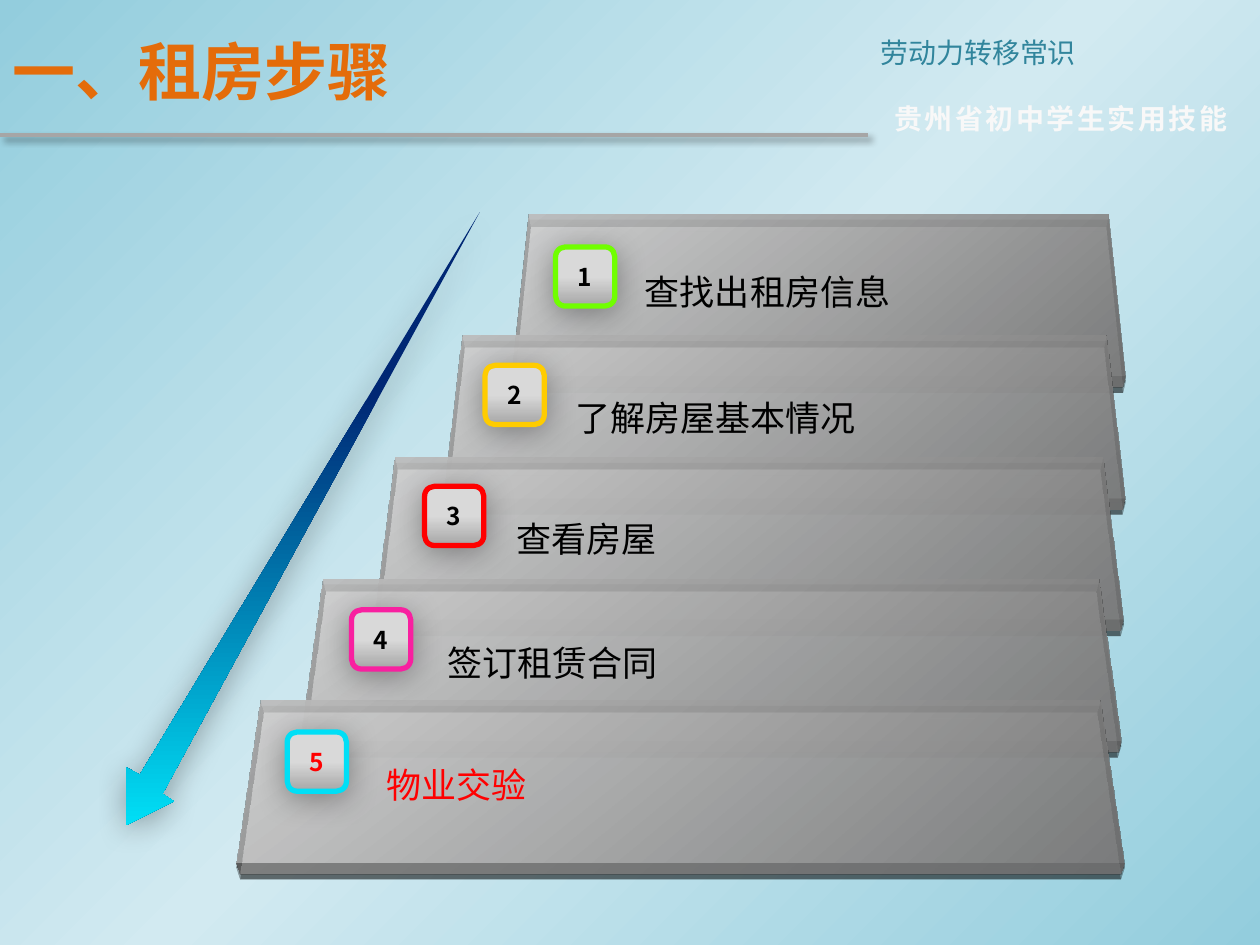
import dataclasses

import lxml.etree
import pptx
import pptx.dml.color
import pptx.enum.shapes
import pptx.enum.text
import pptx.oxml.ns
import pptx.util

Inches = pptx.util.Inches
Pt = pptx.util.Pt
qn = pptx.oxml.ns.qn
Align = pptx.enum.text.PP_ALIGN
Anchor = pptx.enum.text.MSO_ANCHOR
ShapeType = pptx.enum.shapes.MSO_SHAPE


@dataclasses.dataclass(frozen=True)
class Theme:
    font: str = "Noto Sans CJK SC"
    title_size: int = 36
    label_size: int = 20
    header_size: int = 16
    number_size: int = 14
    title: str = "E46C0A"
    topic: str = "31859C"
    series: str = "F8F8F8"
    rule: str = "A6A6A6"
    text: str = "000000"
    highlight: str = "FF0000"
    background: tuple = ((0, "93CDDD"), (50, "D2EAF1"), (100, "93CDDD"))
    slab: tuple = ((0, "D9D9D9"), (100, "808080"))
    badge: tuple = ((50, "D9D9D9"), (100, "A6A6A6"))
    arrow: tuple = ((30, "002774"), (100, "00DFF6"))


THEME = Theme()


@dataclasses.dataclass(frozen=True)
class Step:
    label: str
    color: str
    slab_left: float
    slab_width: float
    badge_at: tuple
    label_at: tuple
    text_color: str = THEME.text


STEPS = (
    Step("查找出租房信息", "70FF00", 4.13, 4.73, (4.41, 1.96), (5.02, 2.1)),
    Step("了解房屋基本情况", "FFCC00", 3.6, 5.25, (3.85, 2.9), (4.47, 3.1)),
    Step("查看房屋", "FF0000", 3.06, 5.77, (3.37, 3.86), (4.0, 4.06)),
    Step("签订租赁合同", "F820A0", 2.48, 6.32, (2.79, 4.84), (3.45, 5.04)),
    Step("物业交验", "00DFF6", 1.98, 6.84, (2.28, 5.81), (2.97, 6.01), THEME.highlight),
)
FIRST_SLAB_TOP, SLAB_PITCH, SLAB_HEIGHT = 1.54, 0.965, 1.57


def rgb(color):
    return pptx.dml.color.RGBColor.from_string(color)


def paint_gradient(fill, element, stops, angle, opacity=100):
    """Fill with any number of (percent, colour) stops; angle runs clockwise."""
    fill.gradient()
    fill.gradient_angle = 360 - angle
    stop_list = next(element.iter(qn("a:gsLst")))
    for stop in list(stop_list):
        stop_list.remove(stop)
    for percent, color in stops:
        stop = lxml.etree.SubElement(stop_list, qn("a:gs"), pos=str(percent * 1000))
        paint = lxml.etree.SubElement(stop, qn("a:srgbClr"), val=color)
        if opacity < 100:
            lxml.etree.SubElement(paint, qn("a:alpha"), val=str(opacity * 1000))


def add_shadow(shape, opacity, blur, distance, angle):
    """Give a shape or connector, whose line is already set, an outer shadow."""
    effects = lxml.etree.SubElement(shape.element.spPr, qn("a:effectLst"))
    shadow = lxml.etree.SubElement(
        effects, qn("a:outerShdw"), blurRad=str(Pt(blur)), dist=str(Pt(distance)),
        dir=str(angle * 60000), algn="ctr", rotWithShape="0")
    color = lxml.etree.SubElement(shadow, qn("a:srgbClr"), val="000000")
    lxml.etree.SubElement(color, qn("a:alpha"), val=str(opacity * 1000))


def tilt_back(shape, thickness):
    """Lay a flat shape down in perspective and give it a thickness."""
    properties = shape.element.spPr
    scene = lxml.etree.SubElement(properties, qn("a:scene3d"))
    lxml.etree.SubElement(scene, qn("a:camera"), prst="perspectiveRelaxedModerately")
    lxml.etree.SubElement(scene, qn("a:lightRig"), rig="threePt", dir="t")
    lxml.etree.SubElement(properties, qn("a:sp3d"), extrusionH=str(Pt(thickness)))


def write(shape, text, size, color, bold=False, align=Align.LEFT, spacing=0):
    frame = shape.text_frame
    frame.word_wrap = True
    frame.auto_size = pptx.enum.text.MSO_AUTO_SIZE.NONE
    paragraph = frame.paragraphs[0]
    paragraph.text = text
    paragraph.alignment = align
    font = paragraph.font
    font.name, font.size, font.bold = THEME.font, Pt(size), bold
    font.color.rgb = rgb(color)
    properties = next(paragraph._p.iter(qn("a:defRPr")))
    lxml.etree.SubElement(properties, qn("a:ea"), typeface=THEME.font)
    if spacing:
        properties.set("spc", str(spacing))
    return frame


def add_label(slide, box, text, size, color, **style):
    textbox = slide.shapes.add_textbox(*map(Inches, box))
    write(textbox, text, size, color, **style)


def add_header(slide, left, top, width, height):
    title_width = 6.89
    title = slide.shapes.title
    title.left, title.top = Inches(left), Inches(top + 0.05)
    title.width, title.height = Inches(title_width), Inches(height - 0.05)
    frame = write(title, "一、租房步骤", THEME.title_size, THEME.title, bold=True)
    frame.vertical_anchor = Anchor.MIDDLE

    side, side_width = left + title_width, width - title_width
    add_label(slide, (side, top + 0.23, side_width, 0.37), "劳动力转移常识",
              THEME.header_size, THEME.topic)
    add_label(slide, (side + 0.11, top + 0.76, side_width - 0.11, 0.37),
              "贵州省初中学生实用技能", THEME.header_size, THEME.series,
              bold=True, spacing=150)

    y = Inches(top + height)
    rule = slide.shapes.add_connector(
        pptx.enum.shapes.MSO_CONNECTOR.STRAIGHT, Inches(left), y, Inches(side), y)
    rule.line.color.rgb = rgb(THEME.rule)
    rule.line.width = Pt(2.25)
    add_shadow(rule, 40, 4, 3, 45)


def add_slab(slide, left, top, width, height):
    slab = slide.shapes.add_shape(ShapeType.RECTANGLE,
                                  *map(Inches, (left, top, width, height)))
    paint_gradient(slab.fill, slab.element, THEME.slab, 45, opacity=50)
    slab.line.fill.background()
    add_shadow(slab, 33, 17.8, 3, 87)
    tilt_back(slab, 12)


def add_badge(slide, left, top, number, step):
    size = Inches(0.47)
    badge = slide.shapes.add_shape(ShapeType.ROUNDED_RECTANGLE,
                                   Inches(left), Inches(top), size, size)
    paint_gradient(badge.fill, badge.element, THEME.badge, 90)
    badge.line.color.rgb = rgb(step.color)
    badge.line.width = Pt(3)
    add_shadow(badge, 33, 17.8, 3, 87)
    frame = write(badge, str(number), THEME.number_size, step.text_color,
                  bold=True, align=Align.CENTER)
    frame.vertical_anchor = Anchor.MIDDLE
    frame.margin_left = frame.margin_right = frame.margin_top = frame.margin_bottom = 0


def add_arrow(slide, left, top, width, height):
    right, bottom = left + width, top + height
    start, *others = [(Inches(x), Inches(y)) for x, y in (
        (right, top), (left + 0.29, bottom - 0.25), (left + 0.38, bottom - 0.19),
        (left, bottom), (left, bottom - 0.46), (left + 0.11, bottom - 0.4))]
    builder = slide.shapes.build_freeform(*start)
    builder.add_line_segments(others, close=True)
    arrow = builder.convert_to_shape()
    paint_gradient(arrow.fill, arrow.element, THEME.arrow, 90)
    arrow.line.fill.background()
    add_shadow(arrow, 33, 17.8, 3, 87)


def main():
    presentation = pptx.Presentation()
    presentation.slide_width, presentation.slide_height = Inches(10), Inches(7.5)
    slide = presentation.slides.add_slide(presentation.slide_layouts[5])
    paint_gradient(slide.background.fill, slide.element, THEME.background, 45)
    add_header(slide, 0, 0, 10, 1.07)
    for index, step in enumerate(STEPS):
        add_slab(slide, step.slab_left, FIRST_SLAB_TOP + index * SLAB_PITCH,
                 step.slab_width, SLAB_HEIGHT)
    add_arrow(slide, 1, 1.68, 2.81, 4.87)
    for number, step in enumerate(STEPS, start=1):
        add_badge(slide, *step.badge_at, number, step)
        add_label(slide, (*step.label_at, 2.97, 0.44), step.label,
                  THEME.label_size, step.text_color)
    presentation.save("out.pptx")


if __name__ == "__main__":
    main()
